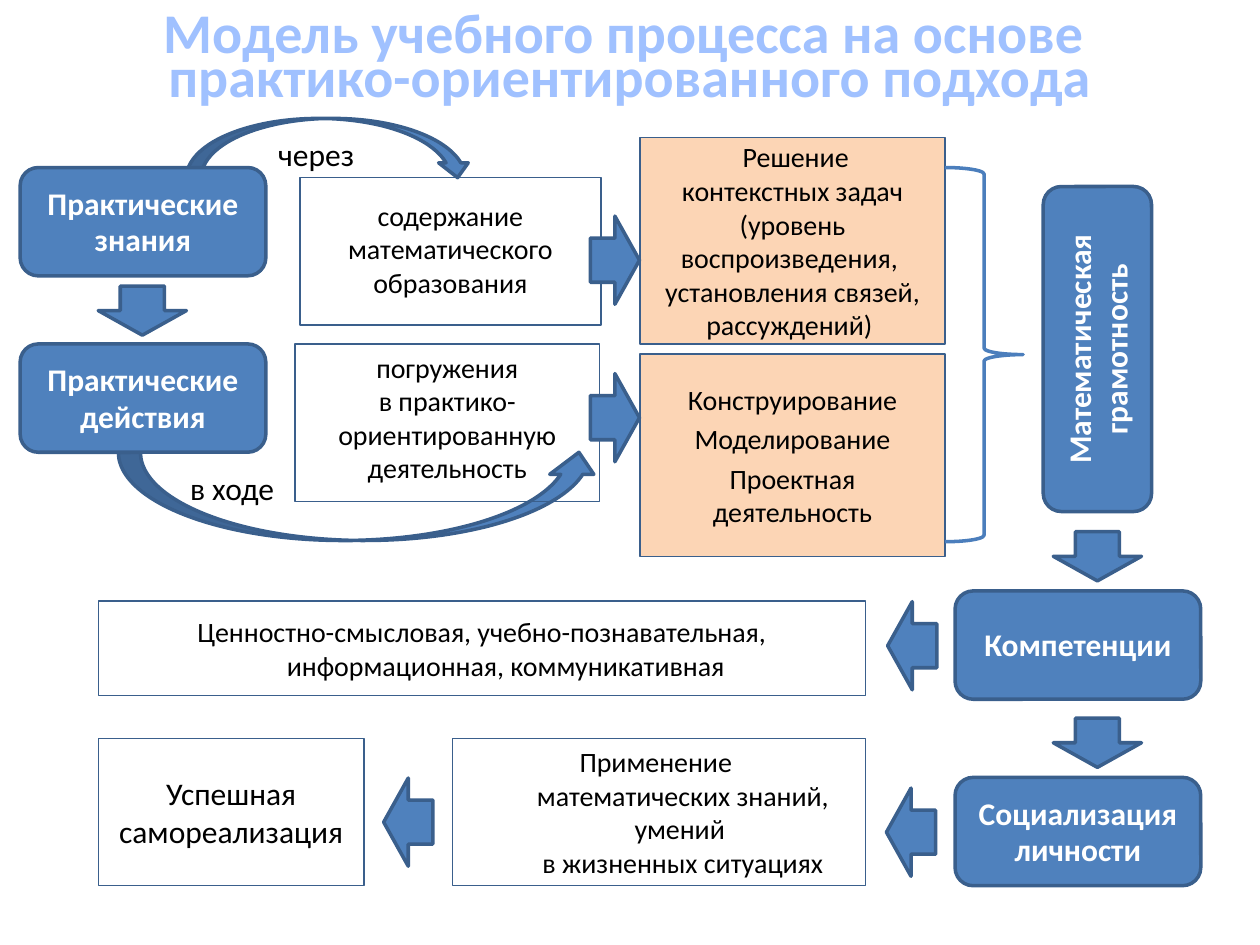
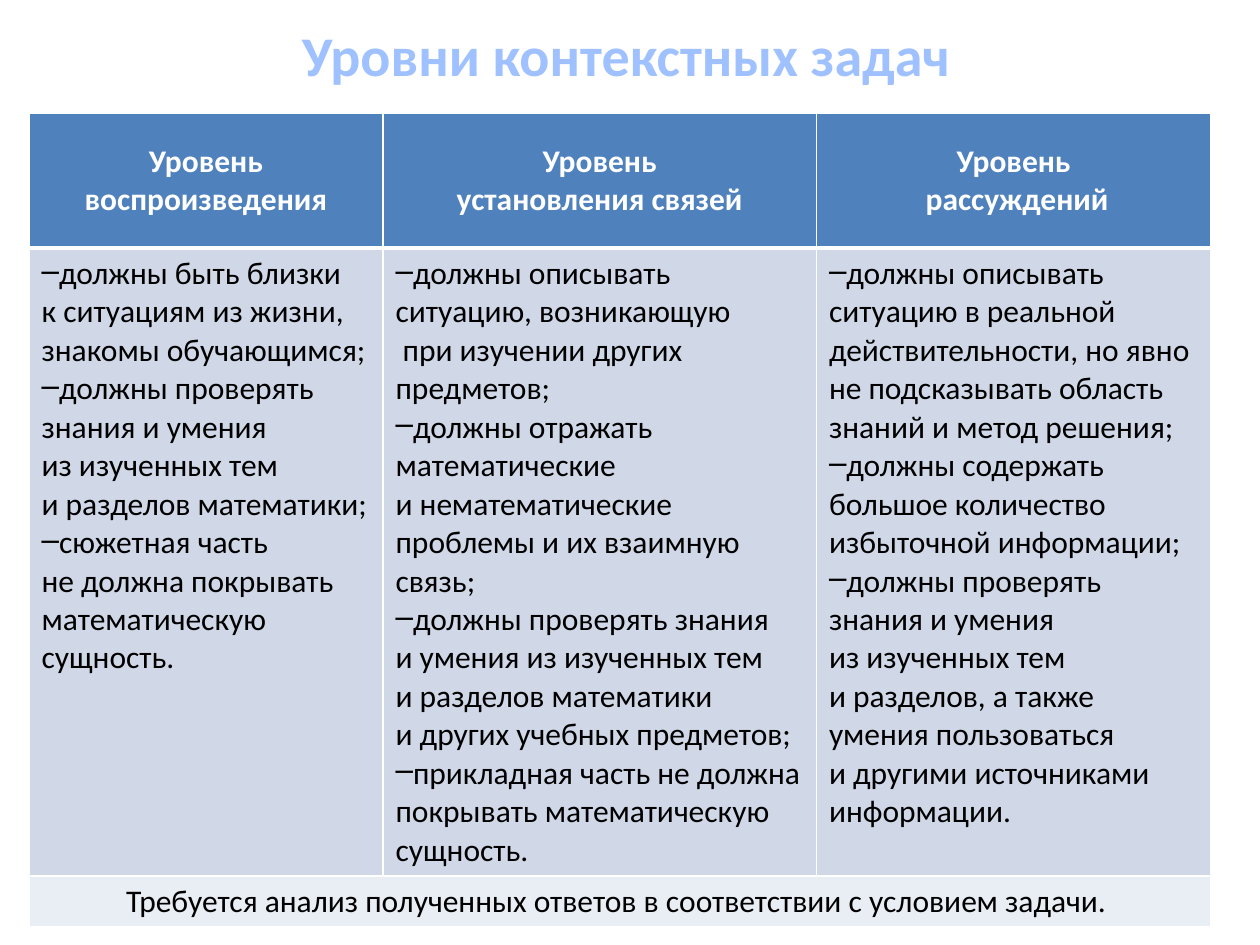
from lxml import etree
from pptx import Presentation
from pptx.dml.color import RGBColor
from pptx.enum.shapes import MSO_SHAPE
from pptx.enum.text import MSO_ANCHOR, MSO_AUTO_SIZE, PP_ALIGN
from pptx.oxml.ns import qn
from pptx.util import Inches, Pt

RECT, ROUND = MSO_SHAPE.RECTANGLE, MSO_SHAPE.ROUNDED_RECTANGLE
DOWN_ARROW = MSO_SHAPE.DOWN_ARROW
CURVED_DOWN, CURVED_UP = MSO_SHAPE.CURVED_DOWN_ARROW, MSO_SHAPE.CURVED_UP_ARROW
BRACE = MSO_SHAPE.RIGHT_BRACE
LEFT, CENTER = PP_ALIGN.LEFT, PP_ALIGN.CENTER
TOP, MIDDLE = MSO_ANCHOR.TOP, MSO_ANCHOR.MIDDLE
NO_FIT = MSO_AUTO_SIZE.NONE

FONT = "Calibri"
COLORS = {
    "title": "A0C1FF", "blue": "4F81BD", "edge": "3A5F8C", "brace": "4B7EBC",
    "peach": "FCD5B5", "black": "000000", "white": "FFFFFF",
    "body_row": "D0D8E8", "last_row": "E9EDF4",
}
HANG = 0.38


def rgb(name):
    return RGBColor.from_string(COLORS[name])


class Deck:
    def __init__(self):
        self.prs = Presentation()
        self.prs.slide_width, self.prs.slide_height = Inches(10), Inches(7.5)
        self.s = None

    def add_slide(self, title, box, spacing=None):
        self.s = self.prs.slides.add_slide(self.prs.slide_layouts[5])
        sp = self.s.shapes.title
        sp.left, sp.top, sp.width, sp.height = map(Inches, box)
        sp.text_frame.auto_size = NO_FIT
        self.set_text(sp.text_frame, [title], 32, "title", bold=True, spacing=spacing)

    def set_text(self, tf, paragraphs, size, color="black", bold=False, align=CENTER,
                 anchor=MIDDLE, spacing=None, before=0, hang=(), bullet=None):
        """Fill a text frame; hang holds the indexes of paragraphs with a hanging indent."""
        tf.word_wrap = True
        tf.vertical_anchor = anchor
        for i, text in enumerate(paragraphs):
            p = tf.paragraphs[0] if i == 0 else tf.add_paragraph()
            p.text = text
            p.alignment = align
            p.space_before = Pt(before)
            if spacing:
                p.line_spacing = Pt(spacing)
            pPr = p._p.get_or_add_pPr()
            if i in hang:
                pPr.set("marL", str(Inches(HANG)))
                pPr.set("indent", str(-Inches(HANG)))
            if bullet:
                etree.SubElement(pPr, qn("a:buChar")).set("char", bullet)
            for r in p.runs:
                r.font.name, r.font.size, r.font.bold = FONT, Pt(size), bold
                r.font.color.rgb = rgb(color)

    def shape(self, kind, box, fill="blue", line="edge", width=2, rotation=0):
        sp = self.s.shapes.add_shape(kind, *map(Inches, box))
        sp.shadow.inherit = False
        sp.rotation = rotation
        if fill:
            sp.fill.solid()
            sp.fill.fore_color.rgb = rgb(fill)
        else:
            sp.fill.background()
        sp.line.color.rgb = rgb(line)
        sp.line.width = Pt(width)
        return sp

    def stage(self, text, box, rotation=0):
        sp = self.shape(ROUND, box, rotation=rotation)
        self.set_text(sp.text_frame, [text], 18, "white", bold=True, spacing=20.8)

    def panel(self, paragraphs, box, size=16, fill=None, inset=None, **style):
        sp = self.shape(RECT, box, fill, width=0.75)
        tf = sp.text_frame
        if inset is not None:
            tf.margin_left = tf.margin_top = tf.margin_right = tf.margin_bottom = inset
        self.set_text(tf, paragraphs, size, **style)

    def label(self, text, box):
        tf = self.s.shapes.add_textbox(*map(Inches, box)).text_frame
        self.set_text(tf, [text], 18, align=LEFT, anchor=TOP)
        tf.word_wrap = False

    def border(self, cell, **widths):
        tcPr = cell._tc.get_or_add_tcPr()
        for side in "LRTB":
            ln = etree.SubElement(tcPr, qn("a:ln" + side))
            ln.set("w", str(Pt(widths.get(side, 1))))
            fill = etree.SubElement(ln, qn("a:solidFill"))
            etree.SubElement(fill, qn("a:srgbClr")).set("val", COLORS["white"])

    def table(self, rows, at, widths, heights, row_styles):
        """Draw rows of cells, each cell a list of paragraphs."""
        frame = self.s.shapes.add_table(len(rows), len(widths), *map(
            Inches, (*at, sum(widths), sum(heights))))
        table = frame.table
        for column, width in zip(table.columns, widths):
            column.width = Inches(width)
        for i, (row, height, (fill, style)) in enumerate(zip(rows, heights, row_styles)):
            table.rows[i].height = Inches(height)
            edges = {0: {"B": 3}, 1: {"T": 3}}.get(i, {})
            for j in range(len(widths)):
                cell = table.cell(i, j)
                self.border(cell, **edges)
                cell.fill.solid()
                cell.fill.fore_color.rgb = rgb(fill)
                if j < len(row):
                    self.set_text(cell.text_frame, row[j], 18, **style)
                    cell.vertical_anchor = style["anchor"]
            if len(row) == 1:
                table.cell(i, 0).merge(table.cell(i, len(widths) - 1))


def add_model_slide(deck):
    deck.add_slide("Модель учебного процесса на основе \nпрактико-ориентированного подхода",
                   (0.31, 0.1, 9.38, 0.83), spacing=25)

    deck.panel(["содержание", "математического", "образования"], (2.38, 1.41, 2.39, 1.17),
               spacing=16, before=3.2, hang=(0, 1, 2))
    deck.shape(CURVED_DOWN, (1.48, 0.94, 2.27, 0.47))
    deck.panel([" Решение", "контекстных задач (уровень воспроизведения, \n"
                "установления связей, рассуждений) "],
               (5.08, 1.09, 2.42, 1.64), fill="peach", inset=0)
    deck.label("через", (2.11, 1.02, 0.81, 0.4))
    deck.shape(CURVED_UP, (0.94, 3.59, 3.83, 0.7))
    deck.label("в ходе", (1.41, 3.67, 0.88, 0.4))
    deck.panel(["погружения\nв практико-ориентированную деятельность"],
               (2.34, 2.73, 2.42, 1.25), anchor=TOP)
    deck.panel(["Конструирование", "Моделирование", "Проектная деятельность"],
               (5.08, 2.81, 2.42, 1.61), fill="peach", before=3.2, hang=(0, 1))
    deck.panel(["Успешная", "самореализация"], (0.78, 5.86, 2.11, 1.17), size=18, hang=(0, 1))
    deck.panel(["Применение \nматематических знаний, умений \nв жизненных ситуациях"],
               (3.59, 5.86, 3.28, 1.17), anchor=TOP, hang=(0,))
    deck.panel(["Ценностно-смысловая, учебно-познавательная, "
                "информационная, коммуникативная"], (0.78, 4.77, 6.09, 0.75), hang=(0,))
    deck.shape(BRACE, (7.5, 1.33, 0.62, 2.97), fill=None, line="brace")

    for text, x, y in [("Практические знания", 0.16, 1.33),
                       ("Практические действия", 0.16, 2.73),
                       ("Компетенции", 7.58, 4.69),
                       ("Социализация личности", 7.58, 6.17)]:
        deck.stage(text, (x, y, 1.95, 0.86))
    deck.stage("Математическая грамотность", (7.42, 2.34, 2.58, 0.86), rotation=270)

    for x, y, rotation in [(0.78, 2.27, 0), (8.36, 4.22, 0), (8.36, 5.7, 0),
                           (4.53, 1.87, 270), (4.53, 3.12, 270),
                           (2.89, 6.33, 90), (6.89, 4.93, 90), (6.88, 6.41, 90)]:
        deck.shape(DOWN_ARROW, (x, y, 0.7, 0.39), rotation=rotation)


def add_levels_slide(deck):
    deck.add_slide("Уровни контекстных задач", (0.47, 0, 9, 0.86))
    header = [["Уровень воспроизведения"], ["Уровень\nустановления связей"],
              ["Уровень\n рассуждений"]]
    requirements = [
        ["должны быть близки \nк ситуациям из жизни, знакомы обучающимся;",
         "должны проверять знания и умения \nиз изученных тем \nи разделов математики;",
         "сюжетная часть \nне должна покрывать математическую сущность."],
        ["должны описывать ситуацию, возникающую\n при изучении других предметов;",
         "должны отражать математические \nи нематематические проблемы "
         "и их взаимную связь;",
         "должны проверять знания\nи умения из изученных тем \nи разделов математики \n"
         "и других учебных предметов;",
         "прикладная часть не должна покрывать математическую сущность."],
        ["должны описывать ситуацию в реальной действительности, но явно "
         "не подсказывать область знаний и метод решения;",
         "должны содержать большое количество избыточной информации;",
         "должны проверять знания и умения \nиз изученных тем \nи разделов, "
         "а также умения пользоваться\nи другими источниками информации."],
    ]
    conclusion = [["Требуется анализ полученных ответов в соответствии с условием задачи. "]]
    deck.table([header, requirements, conclusion], (0.23, 0.9),
               (2.81, 3.44, 3.13), (1.07, 4.97, 0.4),
               [("blue", {"color": "white", "bold": True, "anchor": MIDDLE}),
                ("body_row", {"align": LEFT, "anchor": TOP, "bullet": "–"}),
                ("last_row", {"anchor": TOP})])


def main():
    deck = Deck()
    add_model_slide(deck)
    add_levels_slide(deck)
    deck.prs.save("out.pptx")


if __name__ == "__main__":
    main()
